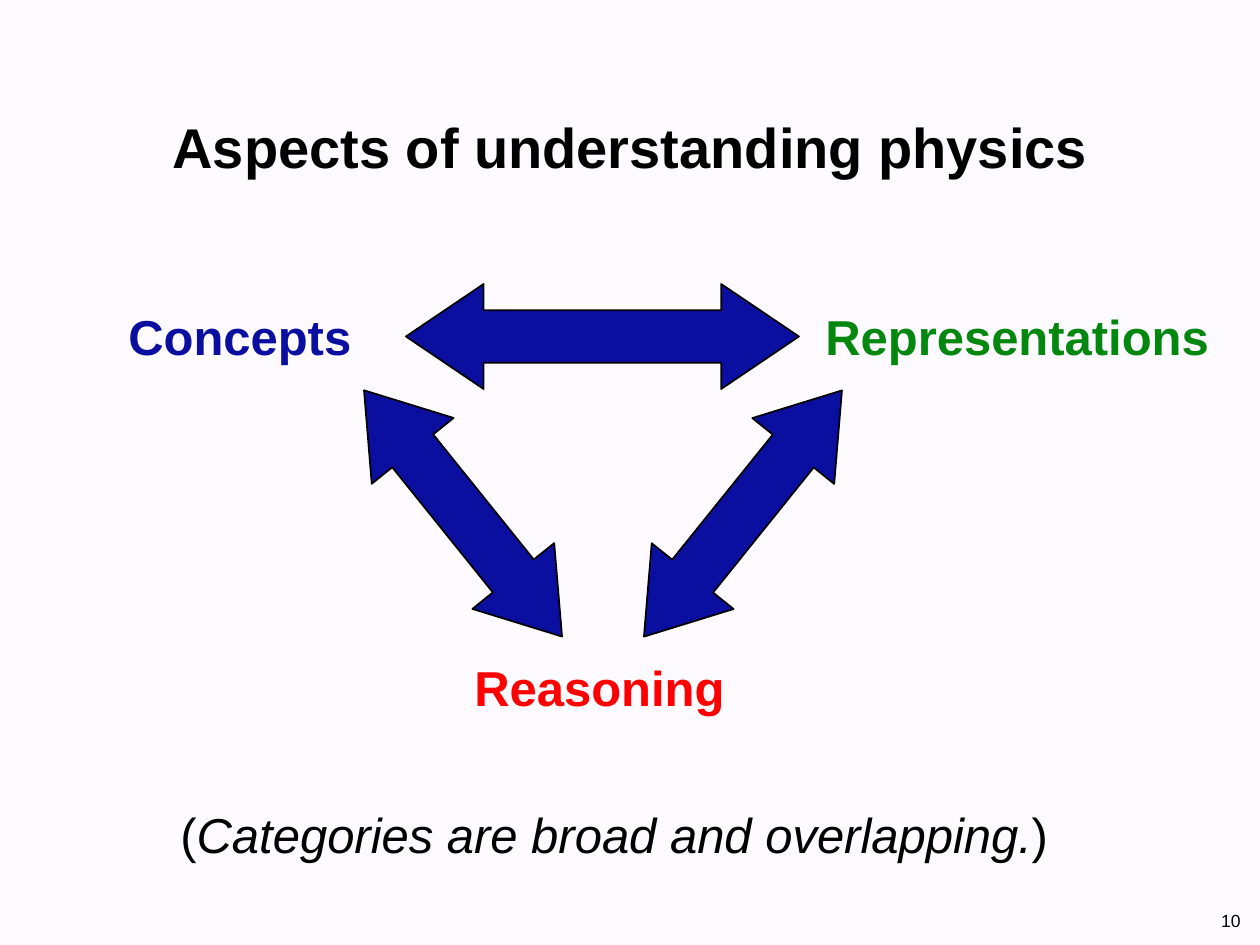
from pptx import Presentation
from pptx.dml.color import RGBColor
from pptx.enum import shapes, text
from pptx.util import Emu, Pt

EMU_PER_PX = 914400 / 126
BLUE, GREEN, RED, BLACK = "0B0FA0", "04870F", "FF0000", "000000"


def px(n):
    return Emu(round(n * EMU_PER_PX))


def color(code):
    return RGBColor.from_string(code)


def add_run(p, words, size=28, fill=BLACK, bold=False, italic=False):
    r = p.add_run()
    r.text = words
    r.font.name = "Arial"
    r.font.size = Pt(size)
    r.font.bold = bold
    r.font.italic = italic
    r.font.color.rgb = color(fill)


class SlideBuilder:
    def __init__(self, prs, background):
        self.s = prs.slides.add_slide(prs.slide_layouts[6])
        self.s.background.fill.solid()
        self.s.background.fill.fore_color.rgb = color(background)

    def label(self, box, words, align="LEFT", anchor="TOP", wrap=False, **style):
        """Add one line of text; words may be a list of (text, italic) pairs."""
        tf = self.s.shapes.add_textbox(*map(px, box)).text_frame
        tf.word_wrap = wrap
        tf.auto_size = text.MSO_AUTO_SIZE.SHAPE_TO_FIT_TEXT
        tf.vertical_anchor = text.MSO_ANCHOR[anchor]
        p = tf.paragraphs[0]
        p.alignment = text.PP_ALIGN[align]
        parts = [(words, False)] if isinstance(words, str) else words
        for part, italic in parts:
            add_run(p, part, italic=italic, **style)

    def double_arrow(self, box, angle=0):
        sp = self.s.shapes.add_shape(
            shapes.MSO_SHAPE.LEFT_RIGHT_ARROW, *map(px, box))
        sp.adjustments[0] = 0.5
        sp.adjustments[1] = 0.74
        sp.rotation = angle
        sp.shadow.inherit = False
        sp.fill.solid()
        sp.fill.fore_color.rgb = color(BLUE)
        sp.line.color.rgb = color(BLACK)
        sp.line.width = Pt(1)


def main():
    prs = Presentation()
    prs.slide_width, prs.slide_height = px(1260), px(945)
    slide = SlideBuilder(prs, "FDFBFF")

    # Page number and title
    slide.label((1203, 903, 50, 34), "10", align="RIGHT", anchor="BOTTOM", size=10)
    slide.label((95, 106, 1071, 81), "Aspects of understanding physics",
                align="CENTER", anchor="MIDDLE", wrap=True, size=32, bold=True)

    # Corners of the triangle
    slide.label((116, 300, 251, 72), "Concepts", fill=BLUE, bold=True)
    slide.label((813, 300, 426, 72), "Representations", wrap=True,
                fill=GREEN, bold=True)
    slide.label((462, 651, 278, 72), "Reasoning", fill=RED, bold=True)

    # Sides of the triangle: the slanted pair mirror each other
    slide.double_arrow((406, 284, 393, 105))
    for left, angle in ((305, 51.2), (585, -51.2)):
        slide.double_arrow((left, 461, 316, 105), angle)

    # Closing remark
    slide.label((168, 798, 895, 72),
                [("(", False), ("Categories are broad and overlapping.", True),
                 (")", False)])

    prs.save("out.pptx")


if __name__ == "__main__":
    main()
